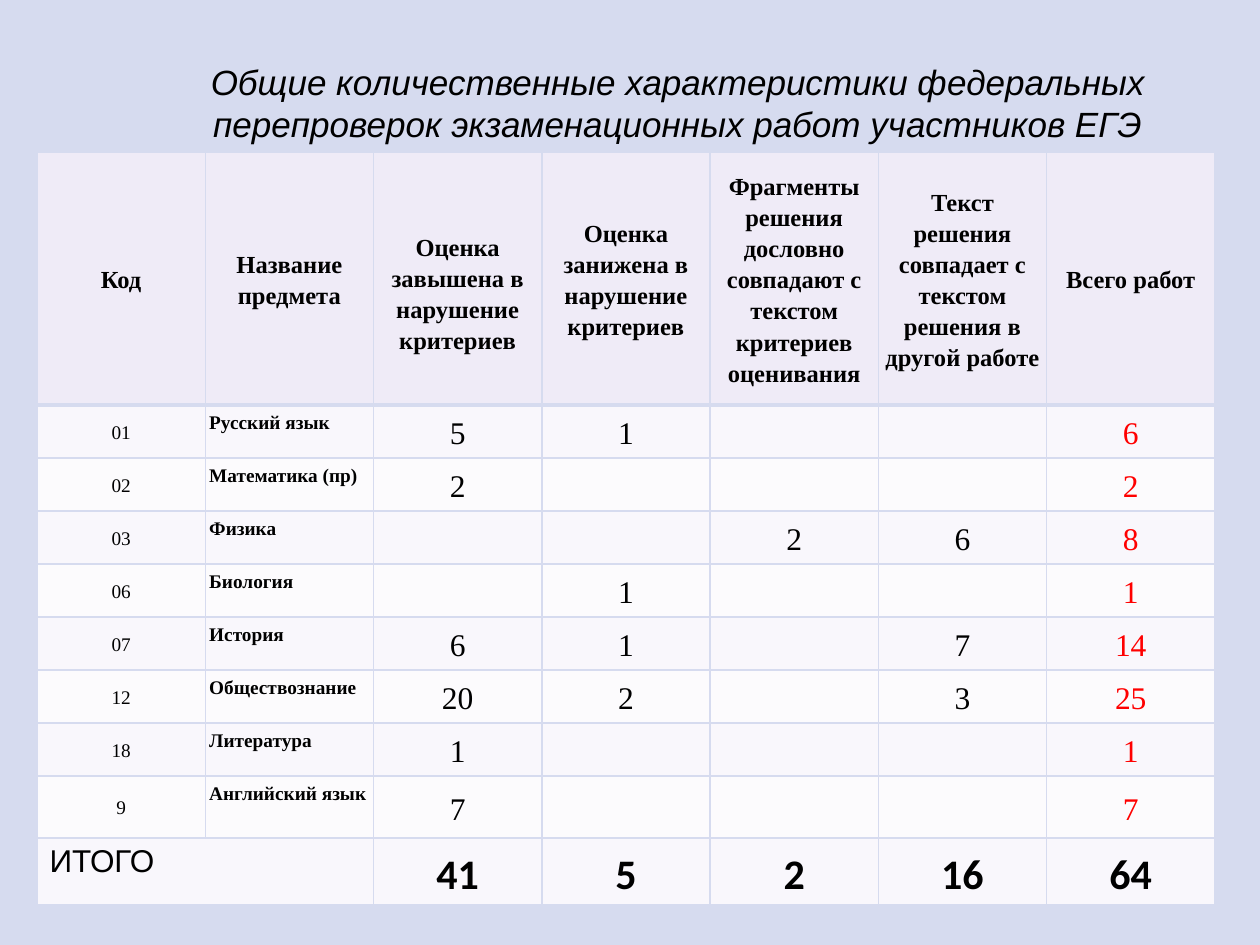
from lxml.etree import SubElement
from pptx import Presentation
from pptx.dml.color import RGBColor as Rgb
from pptx.enum.text import MSO_ANCHOR as Anchor, PP_ALIGN as Align
from pptx.oxml.ns import qn
from pptx.util import Pt

SCALE = 914400 / 126  # EMU per px

BACK = Rgb(0xD6, 0xDB, 0xEF)
HEAD = Rgb(0xEF, 0xEB, 0xF7)
BANDS = (Rgb(0xF9, 0xF7, 0xFC), Rgb(0xFC, 0xFB, 0xFD))
BLACK = Rgb(0, 0, 0)
RED = Rgb(0xFF, 0, 0)
SERIF = "Times New Roman"

TITLE = ("Общие количественные характеристики федеральных "
         "перепроверок экзаменационных работ участников ЕГЭ")
ROWS = [
    ["Код", "Название предмета", "Оценка завышена в нарушение критериев",
     "Оценка занижена в нарушение критериев",
     "Фрагменты решения дословно совпадают с текстом критериев оценивания",
     "Текст решения совпадает с текстом решения в другой работе",
     "Всего работ"],
    ["01", "Русский язык", "5", "1", "", "", "6"],
    ["02", "Математика (пр)", "2", "", "", "", "2"],
    ["03", "Физика", "", "", "2", "6", "8"],
    ["06", "Биология", "", "1", "", "", "1"],
    ["07", "История", "6", "1", "", "7", "14"],
    ["12", "Обществознание", "20", "2", "", "3", "25"],
    ["18", "Литература", "1", "", "", "", "1"],
    ["9", "Английский язык", "7", "", "", "", "7"],
    ["ИТОГО", "", "41", "5", "2", "16", "64"],
]
LAST = len(ROWS) - 1
HEIGHTS = [253] + [53] * 7 + [62, 67]


def px(n):
    return round(n * SCALE)


def style(para, size, face=SERIF, color=BLACK, bold=False, italic=False):
    for run in para.runs:
        font = run.font
        font.size, font.name = Pt(size), face
        font.bold, font.italic = bold, italic
        font.color.rgb = color


def edge(cell, widths):
    """Draw the cell borders; widths are points by side."""
    props = cell._tc.get_or_add_tcPr()
    for side, width in widths.items():
        line = SubElement(props, qn(f"a:ln{side}"), w=str(Pt(width)))
        fill = SubElement(line, qn("a:solidFill"))
        SubElement(fill, qn("a:srgbClr"), val=str(BACK))


def look(row, col):
    """Font settings for one cell of the table."""
    if row == 0:
        return dict(size=14, bold=True)
    if row == LAST:
        if col == 0:
            return dict(size=18, face="Arial")
        return dict(size=24, face="Calibri", bold=True)
    if col < 2:
        return dict(size=11, bold=col == 1)
    return dict(size=18, color=RED if col == 6 else BLACK)


def fill_cell(cell, row, col, text):
    edge(cell, {"L": 1, "R": 1,
                "T": 3 if row == 1 else 1, "B": 3 if row == 0 else 1})
    cell.fill.solid()
    cell.fill.fore_color.rgb = BANDS[(row - 1) % 2] if row else HEAD
    if not text:
        return
    cell.text_frame.text = text
    para = cell.text_frame.paragraphs[0]
    style(para, **look(row, col))
    if (row, col) == (LAST, 0):
        return
    cell.margin_left = cell.margin_right = px(4)
    cell.margin_top = cell.margin_bottom = px(4)
    para.line_spacing = 1.15
    if col == 1 and row:  # subject names sit top left
        return
    para.alignment = Align.CENTER
    cell.vertical_anchor = Anchor.MIDDLE
    if row == LAST:
        cell.vertical_anchor = Anchor.BOTTOM
        para.space_after = Pt(10)
    elif (row, col) == (0, 2):  # this heading hangs lower
        cell.margin_top = px(33)


def add_title(slide, x, y, w, h):
    frame = slide.shapes.add_textbox(px(x), px(y), px(w), px(h)).text_frame
    frame.word_wrap = True
    frame.vertical_anchor = Anchor.MIDDLE
    frame.margin_bottom = px(36)
    frame.text = TITLE
    para = frame.paragraphs[0]
    para.alignment = Align.CENTER
    style(para, 20, "Arial", italic=True)


def add_grid(slide, x, y, w):
    cols = len(ROWS[0])
    table = slide.shapes.add_table(len(ROWS), cols, px(x), px(y),
                                   px(w), px(sum(HEIGHTS))).table
    table.first_row = table.horz_banding = False
    for col in table.columns:
        col.width = px(w / cols)
    for r, (high, texts) in enumerate(zip(HEIGHTS, ROWS)):
        table.rows[r].height = px(high)
        for c, text in enumerate(texts):
            fill_cell(table.cell(r, c), r, c, text)
    table.cell(LAST, 0).merge(table.cell(LAST, 1))


def main():
    deck = Presentation()
    deck.slide_width, deck.slide_height = px(1260), px(945)
    slide = deck.slides.add_slide(deck.slide_layouts[6])
    slide.background.fill.solid()
    slide.background.fill.fore_color.rgb = BACK
    add_title(slide, 111, 38, 1134, 158)
    add_grid(slide, 37, 152, 1178)
    deck.save("out.pptx")


if __name__ == "__main__":
    main()
